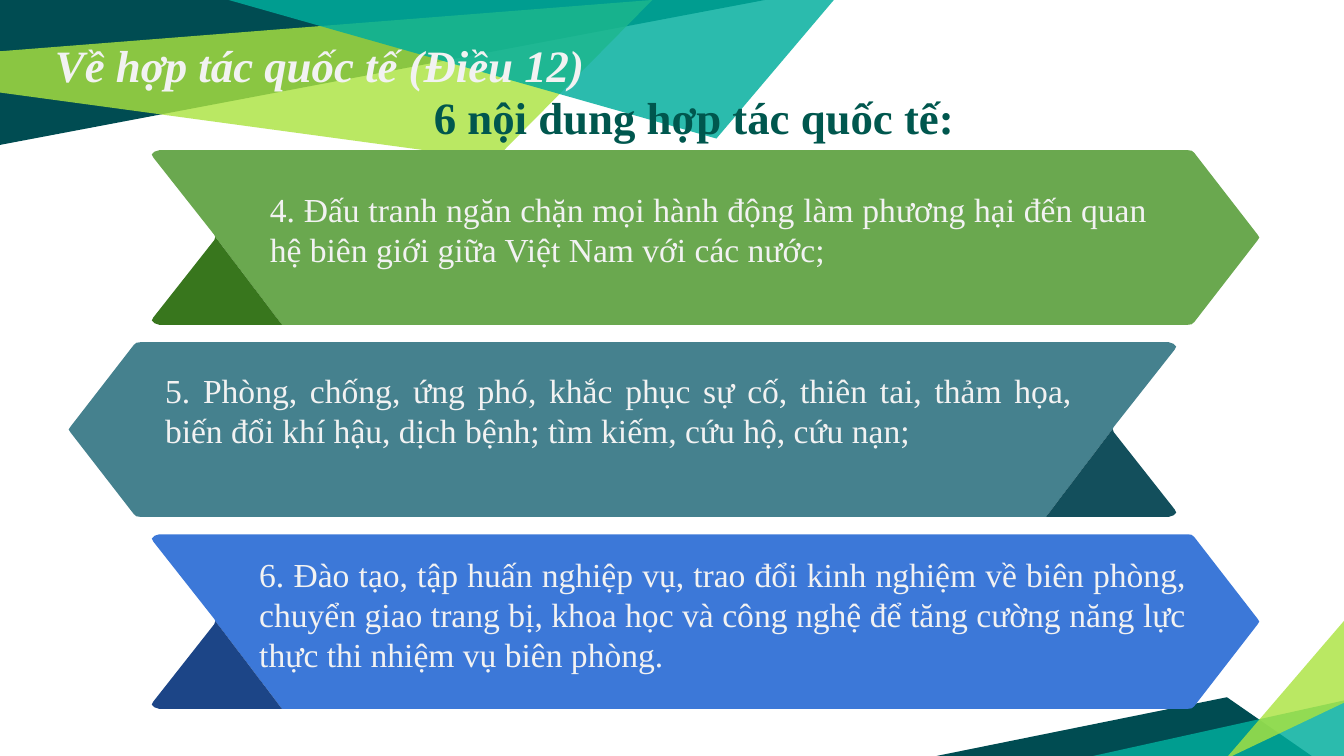
from lxml import etree
from pptx import Presentation
from pptx import util as u
from pptx.dml.color import RGBColor
from pptx.enum import text
from pptx.oxml.ns import qn

FONT = "Times New Roman"
COLORS = {
    "petrol": "004C52", "lime": "ABE33F", "teal": "00AE9D",
    "heading": "00574E", "light": "F2F2F2",
    "green": "6AA84F", "dark green": "38761D",
    "steel": "45818E", "dark steel": "134F5C",
    "blue": "3C78D8", "dark blue": "1C4587",
}

# Outlines in cm: (colour, opacity in percent, points)
TOP_FACETS = [
    ("petrol", 100, [(0, 0), (0, 2.74), (14.46, 0)]),
    ("lime", 81, [(0, 0.97), (0, 1.75), (9.35, 3.02), (12.33, 0)]),
    ("teal", 83, [(4.32, 0), (13.54, 2.62), (15.76, 0)]),
]
BOTTOM_FACETS = [
    ("petrol", 100, [(0, 2.61), (7.09, 2.61), (5.49, 1.5)]),
    ("teal", 83, [(7.75, 1.55), (7.75, 2.67), (2.69, 2.67)]),
    ("lime", 81, [(7.75, 1.58), (7.75, 0), (5.46, 2.67)]),
]

RIBBON_WIDTH, RIBBON_HEIGHT, RIBBON_PITCH = 20.93, 3.3, 3.63
RIBBON_BODY = [
    (2.46, 3.3), (19.58, 3.3), (19.65, 3.29), (19.7, 3.25),
    (20.9, 1.7), (20.93, 1.65), (20.9, 1.6),
    (19.7, 0.05), (19.65, 0.01), (19.58, 0),
    (0.14, 0), (0.05, 0.03), (0, 0.08), (0.03, 0.14),
    (1.18, 1.6), (1.2, 1.64),
]
RIBBON_FOLD = [
    (1.18, 1.7), (0.03, 3.16), (0, 3.22), (0.05, 3.27),
    (0.14, 3.3), (2.46, 3.3), (1.2, 1.64),
]

# Each ribbon: left edge, points left, colour, text box inside it, wording
RIBBONS = [
    (2.87, False, "green", (1.98, 0.61, 17.09, 1.8),
     "4. Đấu tranh ngăn chặn mọi hành động làm phương hại đến quan hệ "
     "biên giới giữa Việt Nam với các nước;"),
    (1.3, True, "steel", (1.57, 0.39, 17.65, 1.8),
     "5. Phòng, chống, ứng phó, khắc phục sự cố, thiên tai, thảm họa, "
     "biến đổi khí hậu, dịch bệnh; tìm kiếm, cứu hộ, cứu nạn;"),
    (2.87, False, "blue", (1.78, 0.24, 18.03, 2.57),
     "6. Đào tạo, tập huấn nghiệp vụ, trao đổi kinh nghiệm về biên phòng, "
     "chuyển giao trang bị, khoa học và công nghệ để tăng cường năng lực "
     "thực thi nhiệm vụ biên phòng."),
]


def color(name):
    return RGBColor.from_string(COLORS[name])


def add_outline(slide, left, top, points, fill, opacity=100):
    corners = [(u.Cm(left + x), u.Cm(top + y)) for x, y in points]
    builder = slide.shapes.build_freeform(*corners[0])
    builder.add_line_segments(corners[1:], close=True)
    shape = builder.convert_to_shape()
    shape.shadow.inherit = False
    shape.line.fill.background()
    shape.fill.solid()
    shape.fill.fore_color.rgb = color(fill)
    if opacity < 100:
        rgb = shape.fill._xPr.find(".//" + qn("a:srgbClr"))
        etree.SubElement(rgb, qn("a:alpha")).set("val", str(opacity * 1000))


def add_text(slide, box, wording, size, fill, bold=False, italic=False,
             align=text.PP_ALIGN.LEFT):
    shape = slide.shapes.add_textbox(*(u.Cm(length) for length in box))
    frame = shape.text_frame
    frame.word_wrap = True
    paragraph = frame.paragraphs[0]
    paragraph.text = wording
    paragraph.alignment = align
    font = paragraph.font
    font.name, font.size = FONT, u.Pt(size)
    font.bold, font.italic = bold, italic
    font.color.rgb = color(fill)
    return frame


def add_facets(slide, left, top, facets):
    """Add a cluster of overlapping translucent polygons."""
    for fill, opacity, points in facets:
        add_outline(slide, left, top, points, fill, opacity)


def add_headings(slide, left, top):
    title = add_text(slide, (left, top, 10.74, 1.68),
                     "Về hợp tác quốc tế (Điều 12)", 24, "light",
                     bold=True, italic=True)
    title.margin_top = title.margin_bottom = u.Cm(0.25)
    add_text(slide, (left + 7.16, top + 1.12, 10.52, 1.27),
             "6 nội dung hợp tác quốc tế:", 24, "heading", bold=True)


def add_ribbon(slide, left, top, points_left, fill, text_box, wording):
    for points, shade in ((RIBBON_BODY, fill), (RIBBON_FOLD, "dark " + fill)):
        if points_left:
            points = [(RIBBON_WIDTH - x, y) for x, y in points]
        add_outline(slide, left, top, points, shade)
    x, y, width, height = text_box
    add_text(slide, (left + x, top + y, width, height), wording, 18, "light",
             align=text.PP_ALIGN.JUSTIFY)


def main():
    presentation = Presentation()
    presentation.slide_width = u.Cm(25.4)
    presentation.slide_height = u.Cm(14.29)
    slide = presentation.slides.add_slide(presentation.slide_layouts[6])

    add_facets(slide, 0, 0, TOP_FACETS)
    add_facets(slide, 17.7, 11.68, BOTTOM_FACETS)
    add_headings(slide, 0.79, 0.46)
    for row, (left, *details) in enumerate(RIBBONS):
        add_ribbon(slide, left, 2.84 + row * RIBBON_PITCH, *details)

    presentation.save("out.pptx")


if __name__ == "__main__":
    main()
